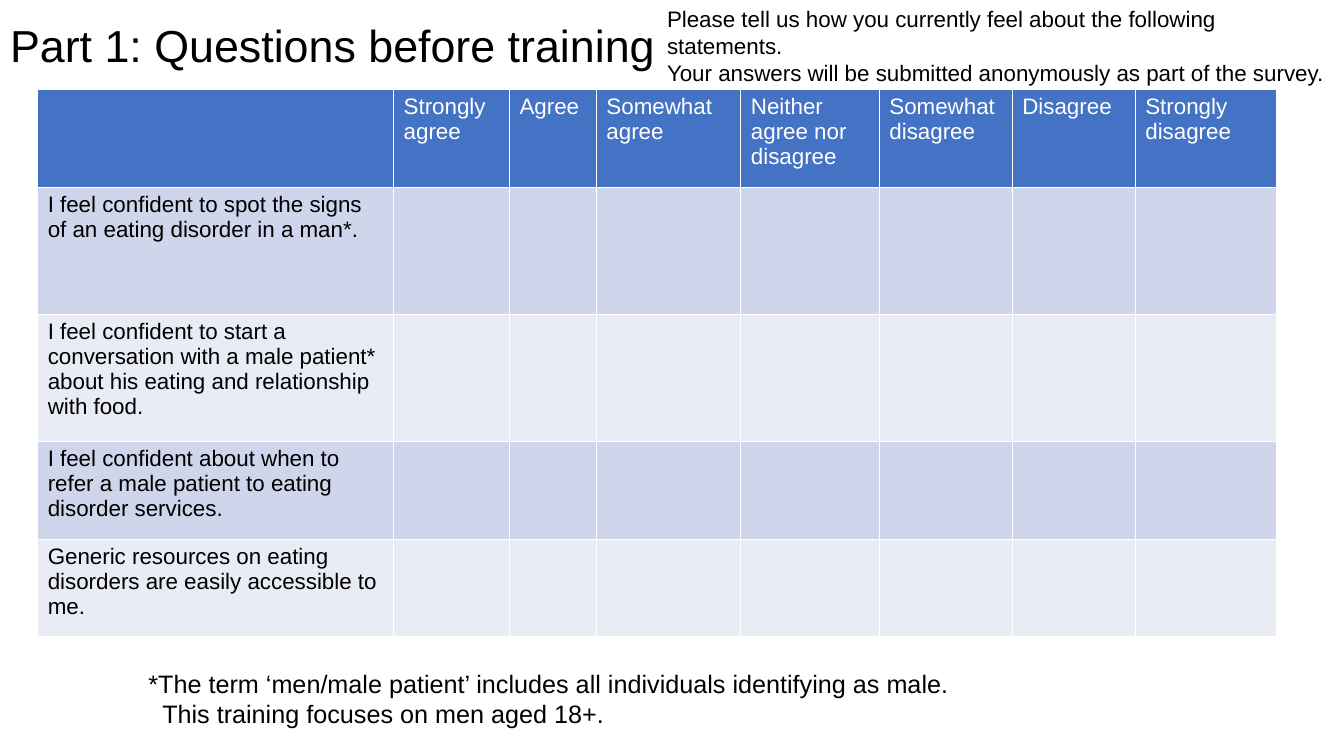
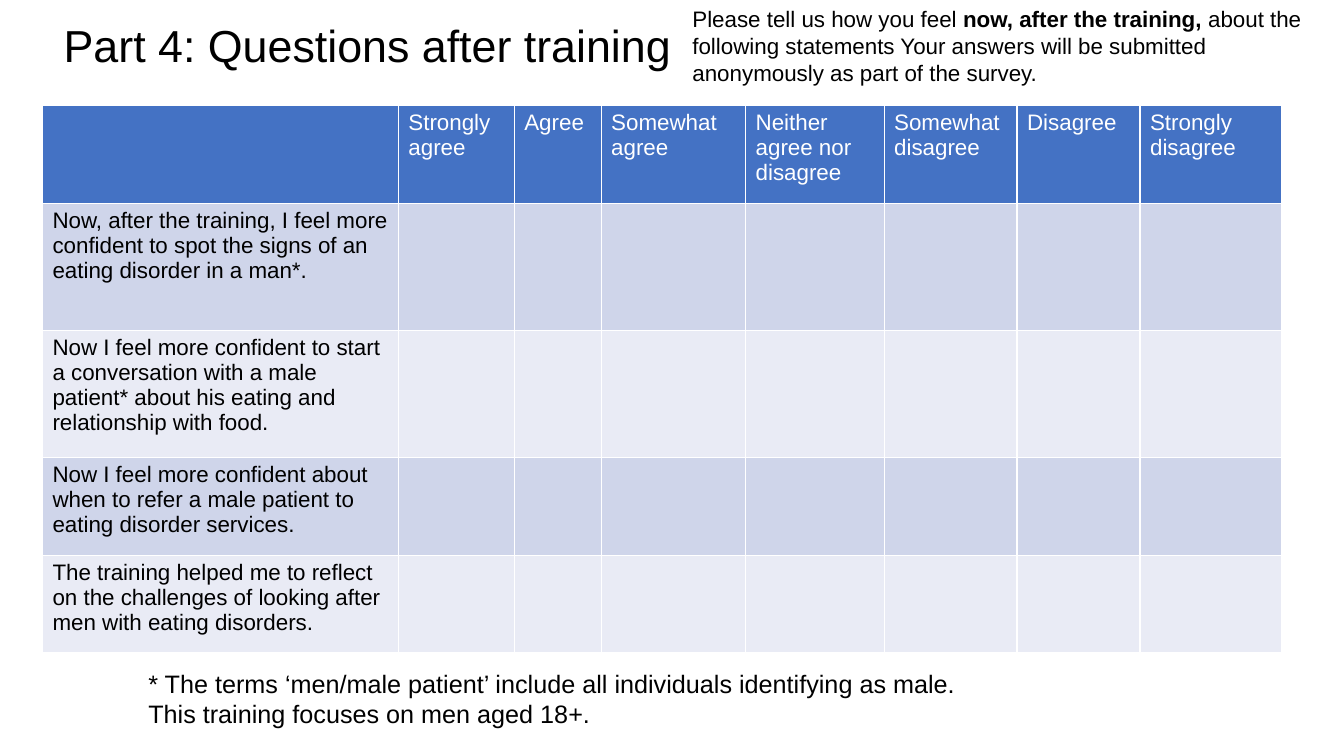
from lxml import etree
from pptx import Presentation
from pptx.dml.color import RGBColor
from pptx.enum.text import MSO_ANCHOR, MSO_AUTO_SIZE, PP_ALIGN
from pptx.oxml.ns import qn
from pptx.util import Cm, Pt

FONT = "Arial"
BLACK = RGBColor(0x00, 0x00, 0x00)
WHITE = RGBColor(0xFF, 0xFF, 0xFF)
HEADER_BLUE = RGBColor(0x44, 0x72, 0xC4)
BAND_DARK = RGBColor(0xCF, 0xD5, 0xEA)
BAND_LIGHT = RGBColor(0xE9, 0xEB, 0xF5)
LEFT = PP_ALIGN.LEFT
MIDDLE = MSO_ANCHOR.MIDDLE
NO_AUTOFIT = MSO_AUTO_SIZE.NONE
GROW = MSO_AUTO_SIZE.SHAPE_TO_FIT_TEXT
TITLE_ONLY_LAYOUT = 5

COLUMN_WIDTHS = (8.97, 2.92, 2.19, 3.64, 3.49, 3.35, 3.1, 3.56)
ROW_HEIGHTS = (2.48, 3.2, 3.2, 2.46, 2.46)
ANSWERS = (
    "Strongly agree", "Agree", "Somewhat agree", "Neither agree nor disagree",
    "Somewhat disagree", "Disagree", "Strongly disagree",
)

SURVEYS = (
    {
        "title": "Part 1: Questions before training",
        "title_left": 0,
        "table_at": (0.95, 2.25),
        "statements": (
            "I feel confident to spot the signs of an eating disorder in a man*.",
            "I feel confident to start a conversation with a male patient* about "
            "his eating and relationship with food.",
            "I feel confident about when to refer a male patient to eating "
            "disorder services.",
            "Generic resources on eating disorders are easily accessible to me.",
        ),
        "instruction_left": 16.56,
        "instructions": (
            (("Please tell us how you currently feel about the following "
              "statements.", False),),
            (("Your answers will be submitted anonymously as part of the "
              "survey.", False),),
        ),
        "footnotes": (
            (("*The term ‘men/male patient’ includes all individuals "
              "identifying as male.", False),),
            (("This training focuses on men aged 18+.", False),),
        ),
        "footnote_indent": 0.35,
    },
    {
        "title": "Part 4: Questions after training",
        "title_left": 1.35,
        "table_at": (1.07, 2.65),
        "statements": (
            "Now, after the training, I feel more confident to spot the signs of "
            "an eating disorder in a man*.",
            "Now I feel more confident to start a conversation with a male "
            "patient* about his eating and relationship with food.",
            "Now I feel more confident about when to refer a male patient to "
            "eating disorder services.",
            "The training helped me to reflect on the challenges of looking "
            "after men with eating disorders.",
        ),
        "instruction_left": 17.2,
        "instructions": (
            (("Please tell us how you feel ", False),
             ("now, after the training, ", True),
             ("about the following statements Your answers will be submitted "
              "anonymously as part of the survey.", False)),
        ),
        "footnotes": (
            (("* The terms ‘men/male patient’ include all individuals "
              "identifying as male.", False),),
            (("This training focuses on men aged 18+.", False),),
        ),
        "footnote_indent": 0,
    },
)


def write_text(paragraph, text, size=16, color=BLACK, bold=False):
    """Append one formatted run to a paragraph."""
    run = paragraph.add_run()
    run.text = text
    run.font.name = FONT
    run.font.size = Pt(size)
    run.font.bold = bold
    run.font.color.rgb = color


def add_title(slide, text, left):
    """Place and fill the title placeholder, ending at a shared right edge."""
    title = slide.shapes.title
    title.left, title.top = Cm(left), Cm(0.25)
    title.width, title.height = Cm(30.55 - left), Cm(1.93)
    frame = title.text_frame
    frame.auto_size = NO_AUTOFIT
    frame.vertical_anchor = MIDDLE
    paragraph = frame.paragraphs[0]
    paragraph.alignment = LEFT
    paragraph.line_spacing = 0.9
    write_text(paragraph, text, size=32)


def add_text_box(slide, left, top, width, height, paragraphs, size=16, indent=0):
    """Add a wrapped text box; paragraphs after the first may be indented."""
    box = slide.shapes.add_textbox(Cm(left), Cm(top), Cm(width), Cm(height))
    frame = box.text_frame
    frame.word_wrap = True
    frame.auto_size = GROW
    for index, runs in enumerate(paragraphs):
        paragraph = frame.add_paragraph() if index else frame.paragraphs[0]
        if index and indent:
            paragraph._p.get_or_add_pPr().set("marL", str(Cm(indent)))
        for text, bold in runs:
            write_text(paragraph, text, size=size, bold=bold)


def set_borders(cell, color=WHITE, width=1):
    """Draw the same line on all four sides of a cell."""
    properties = cell._tc.get_or_add_tcPr()
    for index, side in enumerate(("a:lnL", "a:lnR", "a:lnT", "a:lnB")):
        line = etree.Element(qn(side), w=str(Pt(width)))
        fill = etree.SubElement(line, qn("a:solidFill"))
        etree.SubElement(fill, qn("a:srgbClr"), val=str(color))
        properties.insert(index, line)


def add_answer_table(slide, left, top, statements):
    """Add the answer scale as header, with one banded row per statement."""
    rows = [("",) + ANSWERS]
    rows += [(statement,) + ("",) * len(ANSWERS) for statement in statements]
    table = slide.shapes.add_table(
        len(rows), len(COLUMN_WIDTHS), Cm(left), Cm(top),
        Cm(sum(COLUMN_WIDTHS)), Cm(sum(ROW_HEIGHTS)),
    ).table
    for column, width in zip(table.columns, COLUMN_WIDTHS):
        column.width = Cm(width)
    for row, height in zip(table.rows, ROW_HEIGHTS):
        row.height = Cm(height)
    for row_index, texts in enumerate(rows):
        band = BAND_DARK if row_index % 2 else BAND_LIGHT
        fill_color = band if row_index else HEADER_BLUE
        text_color = BLACK if row_index else WHITE
        for column_index, text in enumerate(texts):
            cell = table.cell(row_index, column_index)
            cell.fill.solid()
            cell.fill.fore_color.rgb = fill_color
            set_borders(cell)
            if text:
                write_text(cell.text_frame.paragraphs[0], text, color=text_color)


def add_survey_slide(presentation, survey):
    """Build one questionnaire slide."""
    layout = presentation.slide_layouts[TITLE_ONLY_LAYOUT]
    slide = presentation.slides.add_slide(layout)
    add_title(slide, survey["title"], survey["title_left"])
    add_answer_table(slide, *survey["table_at"], survey["statements"])
    left = survey["instruction_left"]
    add_text_box(slide, left, 0, 33.87 - left, 2.31, survey["instructions"])
    add_text_box(slide, 3.49, 16.71, 28.83, 1.8, survey["footnotes"],
                 size=18, indent=survey["footnote_indent"])


def main():
    """Build and save the presentation."""
    presentation = Presentation()
    presentation.slide_width = Cm(33.87)
    presentation.slide_height = Cm(19.05)
    for survey in SURVEYS:
        add_survey_slide(presentation, survey)
    presentation.save("out.pptx")


if __name__ == "__main__":
    main()
